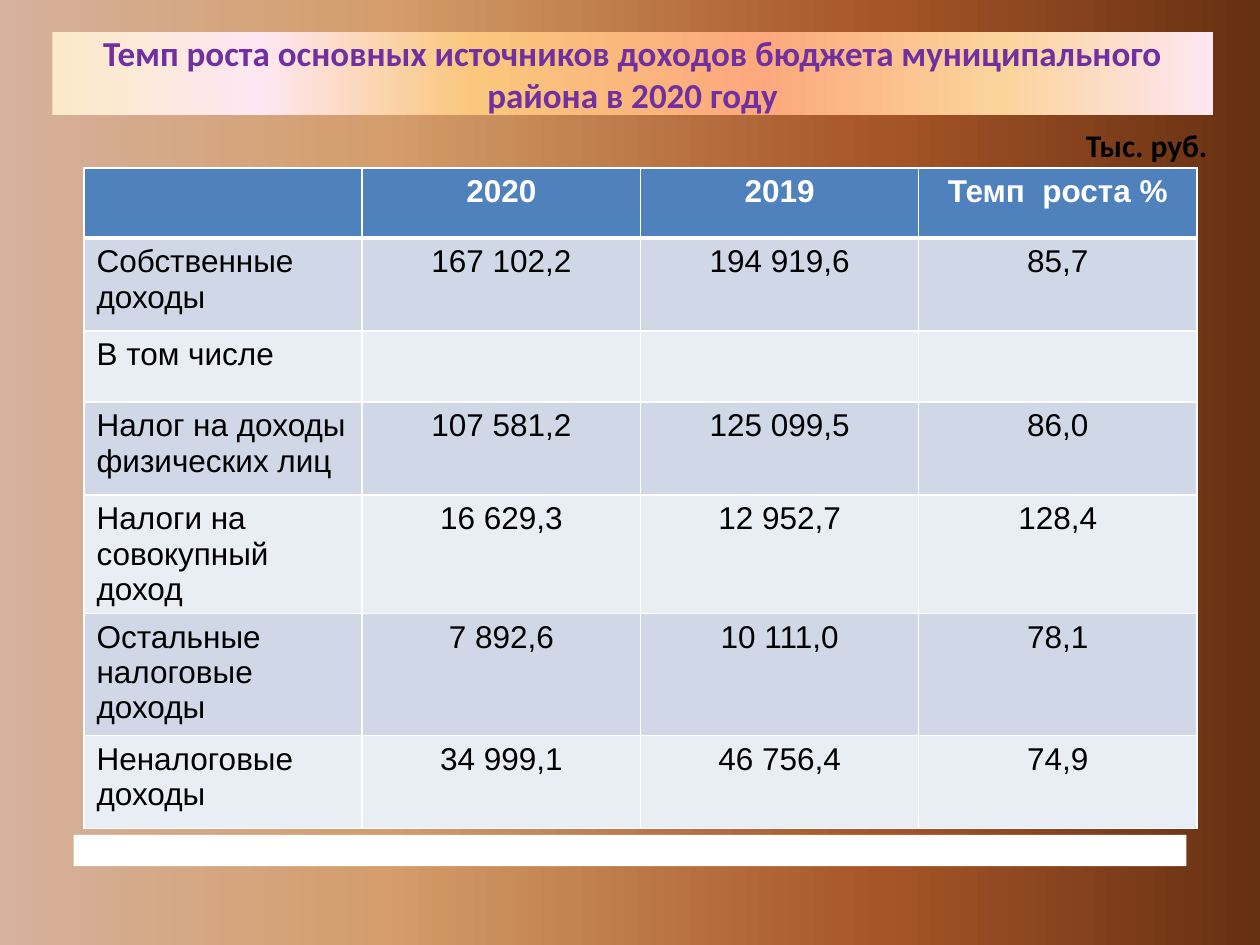
from lxml import etree
from pptx import Presentation
from pptx.dml.color import RGBColor
from pptx.enum.shapes import MSO_SHAPE
from pptx.enum.text import MSO_ANCHOR, MSO_AUTO_SIZE, PP_ALIGN
from pptx.oxml.ns import qn
from pptx.util import Pt

LEFT, CENTER, RIGHT = PP_ALIGN.LEFT, PP_ALIGN.CENTER, PP_ALIGN.RIGHT
MIDDLE = MSO_ANCHOR.MIDDLE
NO_AUTOFIT = MSO_AUTO_SIZE.NONE
RECTANGLE = MSO_SHAPE.RECTANGLE
color = RGBColor.from_string


def paint_gradient(fill, element, stops):
    fill.gradient()
    fill.gradient_angle = 0
    stop_list = element.xpath(".//a:gsLst")[0]
    for stop in list(stop_list):
        stop_list.remove(stop)
    for percent, shade in stops:
        stop = etree.SubElement(stop_list, qn("a:gs"), pos=str(percent * 1000))
        etree.SubElement(stop, qn("a:srgbClr"), val=shade)


def fill_placeholder(box, place, text, align, size, shade):
    box.left, box.top, box.width, box.height = [Pt(length) for length in place]
    frame = box.text_frame
    frame.text = text
    frame.word_wrap = True
    frame.auto_size = NO_AUTOFIT
    frame.vertical_anchor = MIDDLE
    frame.margin_left = frame.margin_top = frame.margin_right = frame.margin_bottom = 0
    para = frame.paragraphs[0]
    para.alignment = align
    para.space_before = Pt(0)
    properties = para._p.get_or_add_pPr()
    properties.set("marL", "0")
    properties.set("indent", "0")
    etree.SubElement(properties, qn("a:buNone"))
    para.font.name = "Calibri"
    para.font.size = Pt(size)
    para.font.bold = True
    para.font.color.rgb = color(shade)


deck = Presentation()
deck.slide_width, deck.slide_height = Pt(720), Pt(540)
page = deck.slides.add_slide(deck.slide_layouts[1])
paint_gradient(page.background.fill, page._element,
               [(0, "D6B19C"), (30, "D49E6C"), (70, "A65528"), (100, "663012")])

title, unit = page.shapes.title, page.placeholders[1]
fill_placeholder(title, (30, 18, 663, 48),
                 "Темп роста основных источников доходов бюджета муниципального района в 2020 году",
                 CENTER, 20, "7030A0")
paint_gradient(title.fill, title._element,
               [(0, "FBEAC7"), (18, "FEE7F2"), (36, "FAC77D"),
                (61, "FBA97D"), (82, "FBD49C"), (100, "FEE7F2")])
fill_placeholder(unit, (378, 72, 312, 21.6), "Тыс. руб.", RIGHT, 18, "000000")

rows = [
    (40, ["", "2020", "2019", "Темп  роста %"]),
    (53.2, ["Собственные доходы", "167 102,2", "194 919,6", "85,7"]),
    (40.5, ["В том числе", "", "", ""]),
    (53.2, ["Налог на доходы физических лиц", "107 581,2", "125 099,5", "86,0"]),
    (53.2, ["Налоги на совокупный доход", "16 629,3", "12 952,7", "128,4"]),
    (69.8, ["Остальные налоговые доходы", "7 892,6", "10 111,0", "78,1"]),
    (53.2, ["Неналоговые доходы", "34 999,1", "46 756,4", "74,9"]),
]
total_height = sum(height for height, texts in rows)
table = page.shapes.add_table(len(rows), 4, Pt(48), Pt(96), Pt(636), Pt(total_height)).table
for column in table.columns:
    column.width = Pt(159)
for row_index, (height, texts) in enumerate(rows):
    table.rows[row_index].height = Pt(height)
    header = row_index == 0
    band = "4F81BD" if header else ("E9EDF4", "D0D8E8")[row_index % 2]
    for column_index, text in enumerate(texts):
        cell = table.cell(row_index, column_index)
        for side in "LRTB":
            thick = (header and side == "B") or (row_index == 1 and side == "T")
            border = etree.SubElement(cell._tc.get_or_add_tcPr(), qn("a:ln" + side),
                                      w=str(Pt(3 if thick else 1)))
            line_fill = etree.SubElement(border, qn("a:solidFill"))
            etree.SubElement(line_fill, qn("a:srgbClr"), val="FFFFFF")
        cell.fill.solid()
        cell.fill.fore_color.rgb = color(band)
        cell.text = text
        para = cell.text_frame.paragraphs[0]
        para.alignment = CENTER if column_index else LEFT
        para.font.name = "Arial"
        para.font.size = Pt(18)
        para.font.bold = header
        para.font.color.rgb = color("FFFFFF" if header else "000000")

strip = page.shapes.add_shape(RECTANGLE, Pt(42), Pt(477), Pt(636), Pt(18))
strip.shadow.inherit = False
strip.fill.solid()
strip.fill.fore_color.rgb = color("FFFFFF")
strip.line.fill.background()

deck.save("out.pptx")
